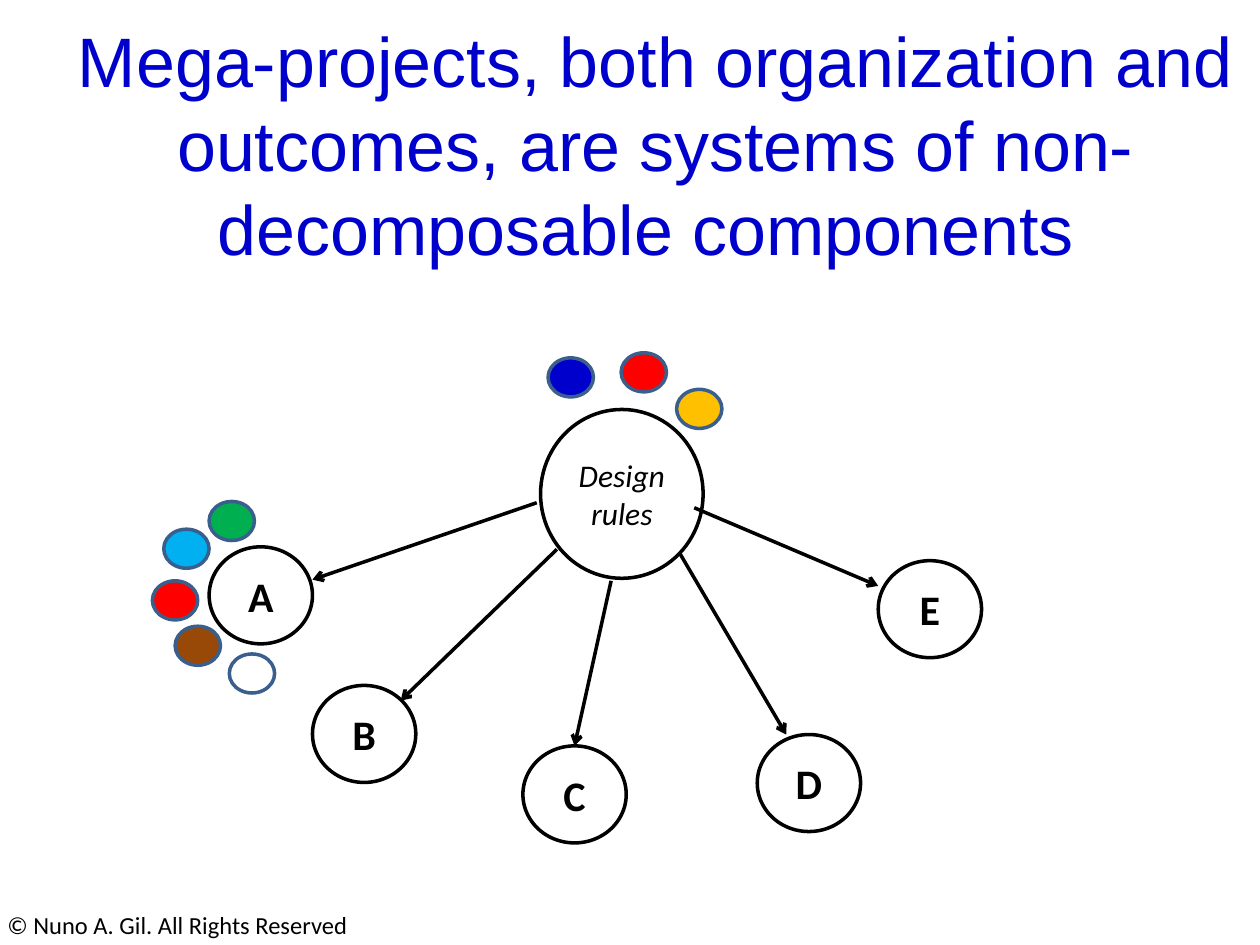
from lxml.etree import SubElement
from pptx import Presentation
from pptx.dml.color import RGBColor
from pptx.enum.shapes import MSO_CONNECTOR, MSO_SHAPE
from pptx.enum.text import MSO_ANCHOR, MSO_AUTO_SIZE, PP_ALIGN
from pptx.oxml.ns import qn
from pptx.util import Inches, Pt

BLACK = RGBColor(0, 0, 0)
WHITE = RGBColor(255, 255, 255)
BLUE = RGBColor(0, 0, 0xCC)
RED = RGBColor(255, 0, 0)
GOLD = RGBColor(255, 0xC0, 0)
SKY = RGBColor(0, 0xB0, 0xF0)
GREEN = RGBColor(0, 0xB0, 0x50)
BROWN = RGBColor(0x98, 0x48, 0x07)
STEEL = RGBColor(0x3A, 0x5F, 0x8C)

WIDE, HIGH = Inches(10), Inches(7.5)
COLS, ROWS = 100, 75

TITLE = {"name": "Arial", "size": Pt(40), "bold": False}
HUB = {"name": "Calibri", "size": Pt(18), "italic": True}
NODE = {"name": "Calibri", "size": Pt(24), "bold": True}
FOOT = {"name": "Calibri", "size": Pt(14)}

NODES = {"A": (16.6, 43.4), "B": (24.8, 54.4), "C": (41.5, 59.2),
         "D": (60.1, 58.3), "E": (69.7, 44.5)}
DOTS = [(13, 42, SKY), (12.1, 46.1, RED), (16.6, 39.8, GREEN),
        (13.9, 49.7, BROWN), (18.2, 51.9, WHITE), (53.7, 30.9, GOLD),
        (49.3, 28, RED), (43.5, 28.4, BLUE)]
ARROWS = [(42.6, 39.9, 24.8, 46), (44.2, 43.6, 31.8, 55.6),
          (55.1, 40.3, 69.7, 46.5), (48.5, 46.1, 45.6, 59.2),
          (54, 44, 62.4, 58.3)]


def grid(x, y, *more):
    """Turn column and row pairs into slide lengths."""
    pair = (round(WIDE * x / COLS), round(HIGH * y / ROWS))
    return pair + (grid(*more) if more else ())


def write(shape, text, style, color, align=PP_ALIGN.CENTER):
    """Put one styled paragraph into a shape."""
    para = shape.text_frame.paragraphs[0]
    para.alignment = align
    run = para.add_run()
    run.text = text
    for key, value in style.items():
        setattr(run.font, key, value)
    run.font.color.rgb = color
    return para


def oval(slide, box, fill, line):
    """Add a filled, outlined ellipse."""
    shape = slide.shapes.add_shape(MSO_SHAPE.OVAL, *grid(*box))
    shape.shadow.inherit = False
    shape.fill.solid()
    shape.fill.fore_color.rgb = fill
    shape.line.color.rgb = line
    shape.line.width = Pt(2)
    shape.text_frame.vertical_anchor = MSO_ANCHOR.MIDDLE
    return shape


def arrow(slide, ends):
    """Add a straight line with an open arrowhead."""
    line = slide.shapes.add_connector(MSO_CONNECTOR.STRAIGHT, *grid(*ends))
    line.line.color.rgb = BLACK
    line.line.width = Pt(2)
    SubElement(line.line._get_or_add_ln(), qn("a:tailEnd"), type="arrow")
    SubElement(line._element.spPr, qn("a:effectLst"))


def head(slide, text):
    """Fill and place the title."""
    title = slide.shapes.title
    title.left, title.top, title.width, title.height = grid(2, 0.9, 100, 21)
    frame = title.text_frame
    frame.auto_size = MSO_AUTO_SIZE.NONE
    frame.word_wrap = True
    frame.vertical_anchor = MSO_ANCHOR.TOP
    write(title, text, TITLE, BLUE).line_spacing = Pt(48)


def foot(slide, text):
    """Add the rights line at the bottom."""
    box = slide.shapes.add_textbox(*grid(-0.4, 71.7, 100.4, 3.4))
    box.text_frame.word_wrap = True
    write(box, text, FOOT, BLACK, PP_ALIGN.LEFT)


def main():
    """Build and save the slide."""
    deck = Presentation()
    deck.slide_width, deck.slide_height = WIDE, HIGH
    slide = deck.slides.add_slide(deck.slide_layouts[5])
    foot(slide, "© Nuno A. Gil. All Rights Reserved")
    head(slide, "Mega-projects, both organization and outcomes, "
                "are systems of non-decomposable components ")
    hub = oval(slide, (42.9, 32.5, 12.9, 13.4), WHITE, BLACK)
    write(hub, "Design rules", HUB, BLACK)
    for ends in ARROWS:
        arrow(slide, ends)
    for name, spot in NODES.items():
        node = oval(slide, (*spot, 8.2, 7.7), WHITE, BLACK)
        write(node, name, NODE, BLACK)
    for x, y, fill in DOTS:
        oval(slide, (x, y, 3.6, 3.1), fill, STEEL)
    deck.save("out.pptx")


if __name__ == "__main__":
    main()
